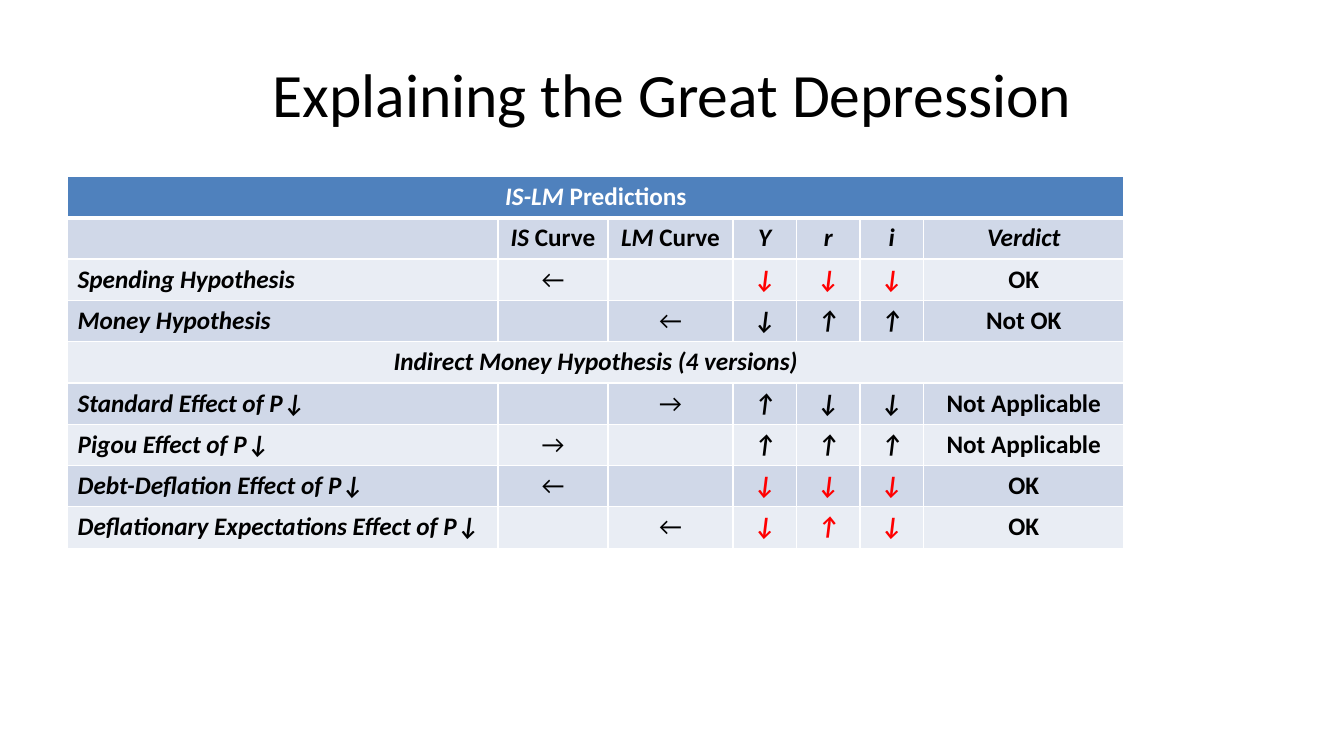
from dataclasses import dataclass

from lxml.etree import SubElement
from pptx import Presentation
from pptx.dml.color import RGBColor
from pptx.enum.text import MSO_ANCHOR, PP_ALIGN
from pptx.oxml.ns import qn
from pptx.util import Inches, Pt


@dataclass(frozen=True)
class Theme:
    font: str = "Calibri"
    title: int = 44
    body: int = 18
    ink: str = "000000"
    white: str = "FFFFFF"
    red: str = "FF0000"
    head: str = "4F81BD"
    bands: tuple = ("E9EDF4", "D0D8E8")


THEME = Theme()
WIDTHS = (4.27, 1.09, 1.24, 0.63, 0.63, 0.63, 1.99)
ROW = 0.41

# Run styles: b = bold, i = italic
HEADS = [
    [],
    [("IS", "bi"), (" Curve", "b")],
    [("LM", "bi"), (" Curve", "b")],
    *[[(name, "bi")] for name in ("Y", "r", "i", "Verdict")],
]
STYLES = ("bi", "", "", "bi", "bi", "bi", "b")

# Label, IS shift, LM shift, effects on Y, r and i, verdict
DIRECT = [
    ("Spending Hypothesis", "←", "", *"↓↓↓", "OK"),
    ("Money Hypothesis", "", "←", *"↓↑↑", "Not OK"),
]
INDIRECT = [
    ("Standard Effect of P↓", "", "→", *"↑↓↓", "Not Applicable"),
    ("Pigou Effect of P↓", "→", "", *"↑↑↑", "Not Applicable"),
    ("Debt-Deflation Effect of P↓", "←", "", *"↓↓↓", "OK"),
    ("Deflationary Expectations Effect of P↓", "", "←", *"↓↑↓", "OK"),
]


def add_run(para, text, size, color, style=""):
    run = para.add_run()
    run.text = text
    font = run.font
    font.name, font.size = THEME.font, Pt(size)
    font.bold, font.italic = "b" in style, "i" in style
    font.color.rgb = RGBColor.from_string(color)


def add_edges(cell, top, bottom):
    props = cell._tc.get_or_add_tcPr()
    for side, width in (("L", 1), ("R", 1), ("T", top), ("B", bottom)):
        line = SubElement(props, qn(f"a:ln{side}"), w=str(Pt(width)))
        fill = SubElement(line, qn("a:solidFill"))
        SubElement(fill, qn("a:srgbClr"), val=THEME.white)


def fill_cell(cell, runs, color, align):
    para = cell.text_frame.paragraphs[0]
    para.alignment = align
    para.font.size = Pt(THEME.body)
    for text, style in runs:
        add_run(para, text, THEME.body, color, style)


def fill_row(table, row, record):
    confirmed = record[-1] == "OK"
    for col, (text, style) in enumerate(zip(record, STYLES)):
        color = THEME.red if confirmed and 3 <= col <= 5 else THEME.ink
        align = PP_ALIGN.CENTER if col else PP_ALIGN.LEFT
        fill_cell(table.cell(row, col), [(text, style)] if text else [], color, align)


def fill_span(table, row, runs, color):
    first = table.cell(row, 0)
    first.merge(table.cell(row, len(WIDTHS) - 1))
    fill_cell(first, runs, color, PP_ALIGN.CENTER)


def add_title(slide, left, top, width, height):
    title = slide.shapes.title
    title.left, title.top = Inches(left), Inches(top)
    title.width, title.height = Inches(width), Inches(height)
    frame = title.text_frame
    frame.vertical_anchor = MSO_ANCHOR.MIDDLE
    para = frame.paragraphs[0]
    para.alignment = PP_ALIGN.CENTER
    add_run(para, "Explaining the Great Depression", THEME.title, THEME.ink)


def add_grid(slide, left, top):
    count = 3 + len(DIRECT) + len(INDIRECT)
    table = slide.shapes.add_table(
        count, len(WIDTHS), Inches(left), Inches(top),
        Inches(sum(WIDTHS)), Inches(ROW * count),
    ).table
    for col, width in zip(table.columns, WIDTHS):
        col.width = Inches(width)

    # Bands and white rules
    for index, row in enumerate(table.rows):
        row.height = Inches(ROW)
        back = THEME.bands[index % 2] if index else THEME.head
        for cell in row.cells:
            add_edges(cell, 3 if index == 1 else 1, 1 if index else 3)
            cell.fill.solid()
            cell.fill.fore_color.rgb = RGBColor.from_string(back)

    # Headings
    fill_span(table, 0, [("IS-LM", "bi"), (" Predictions", "b")], THEME.white)
    for col, runs in enumerate(HEADS):
        fill_cell(table.cell(1, col), runs, THEME.ink, PP_ALIGN.CENTER)

    # Hypotheses
    for row, record in enumerate(DIRECT, 2):
        fill_row(table, row, record)
    split = 2 + len(DIRECT)
    label = [("Indirect Money Hypothesis (4 versions)", "bi")]
    fill_span(table, split, label, THEME.ink)
    for row, record in enumerate(INDIRECT, split + 1):
        fill_row(table, row, record)


def main():
    deck = Presentation()
    deck.slide_width, deck.slide_height = Inches(13.33), Inches(7.5)
    slide = deck.slides.add_slide(deck.slide_layouts[5])
    add_title(slide, 0.67, 0.3, 12, 1.25)
    add_grid(slide, 0.67, 1.75)
    deck.save("out.pptx")


if __name__ == "__main__":
    main()
